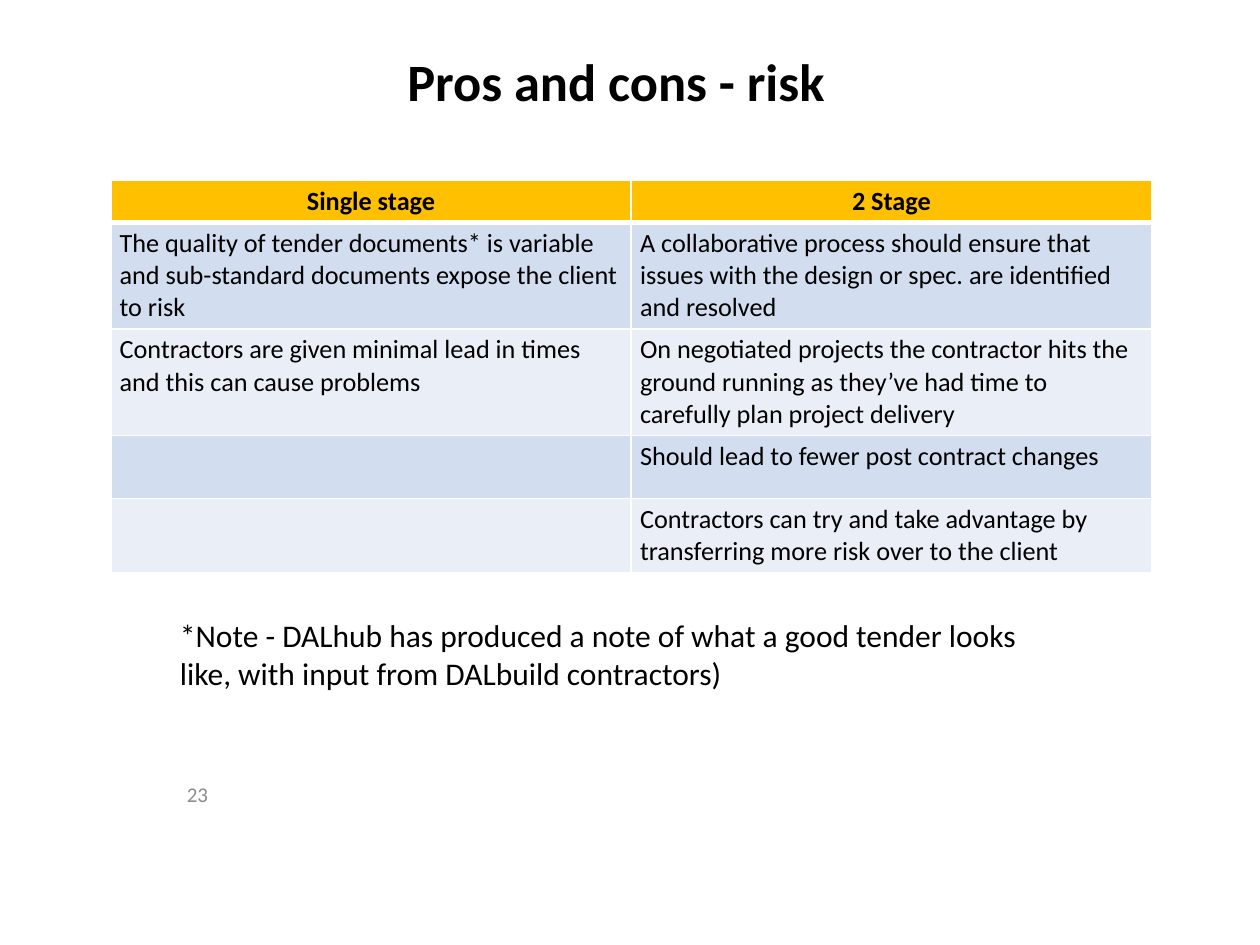
from lxml.etree import SubElement
from pptx import Presentation
from pptx.dml.color import RGBColor
from pptx.enum.text import MSO_ANCHOR as Anchor, MSO_AUTO_SIZE as AutoSize, PP_ALIGN as Align
from pptx.oxml.ns import qn
from pptx.util import Inches, Pt

HEADINGS = ["Single stage", "2 Stage"]
RISKS = [
    ("The quality of tender documents* is variable and sub-standard documents "
     "expose the client to risk",
     "A collaborative process should ensure that issues with the design or spec. "
     "are identified and resolved"),
    ("Contractors are given minimal lead in times and this can cause problems",
     "On negotiated projects the contractor hits the ground running as they’ve had "
     "time to carefully plan project delivery"),
    ("", "Should lead to fewer post contract changes"),
    ("", "Contractors can try and take advantage by transferring more risk over "
     "to the client"),
]
ROW_HEIGHTS = [4.4, 10.93, 10.93, 6.67, 7.6]


def colour(hex_text):
    return RGBColor.from_string(hex_text)


class RiskSlide:
    """Places elements on one slide; lengths are percentages of its size."""
    font = "Calibri"
    ink, grey, rule = "000000", "8C8C8C", "FFFFFF"
    header_fill, band_fills = "FFC000", ("D2DEEF", "EAEFF7")

    def __init__(self, deck):
        self.deck = deck
        self.page = deck.slides.add_slide(deck.slide_layouts[5])

    def across(self, share):
        return round(self.deck.slide_width * share / 100)

    def down(self, share):
        return round(self.deck.slide_height * share / 100)

    def area(self, left, top, width, height):
        return self.across(left), self.down(top), self.across(width), self.down(height)

    def add_words(self, frame, text, size, align=Align.LEFT, bold=False, ink=None):
        frame.word_wrap = True
        para = frame.paragraphs[0]
        para.alignment = align
        span = para.add_run()
        span.text = text
        span.font.name = self.font
        span.font.size = Pt(size)
        span.font.bold = bold
        span.font.color.rgb = colour(ink or self.ink)

    def title(self, text, area):
        box = self.page.shapes.title
        box.left, box.top, box.width, box.height = self.area(*area)
        box.text_frame.vertical_anchor = Anchor.MIDDLE
        self.add_words(box.text_frame, text, 30, Align.CENTER, bold=True)

    def text(self, text, area, size, anchor=Anchor.TOP, auto_size=AutoSize.NONE, **style):
        frame = self.page.shapes.add_textbox(*self.area(*area)).text_frame
        frame.vertical_anchor = anchor
        frame.auto_size = auto_size
        self.add_words(frame, text, size, **style)

    def border(self, cell, side, points):
        line = SubElement(cell._tc.get_or_add_tcPr(), qn(f"a:ln{side}"), w=str(Pt(points)))
        fill = SubElement(line, qn("a:solidFill"))
        SubElement(fill, qn("a:srgbClr"), val=self.rule)

    def cell(self, cell, text, row):
        header = row == 0
        cell.margin_left = cell.margin_right = Inches(0.07)
        cell.margin_top = cell.margin_bottom = Inches(0.04)
        for side in "LRTB":
            heavy = (header and side == "B") or (row == 1 and side == "T")
            self.border(cell, side, 3 if heavy else 1)
        cell.fill.solid()
        cell.fill.fore_color.rgb = colour(
            self.header_fill if header else self.band_fills[(row - 1) % 2])
        if text:
            self.add_words(cell.text_frame, text, 15,
                           Align.CENTER if header else Align.LEFT, bold=header)

    def table(self, rows, heights, left, top, width):
        area = self.area(left, top, width, sum(heights))
        table = self.page.shapes.add_table(len(rows), len(rows[0]), *area).table
        for column in table.columns:
            column.width = self.across(width / len(rows[0]))
        for index, (texts, height) in enumerate(zip(rows, heights)):
            table.rows[index].height = self.down(height)
            for column, text in enumerate(texts):
                self.cell(table.cell(index, column), text, index)


def main():
    deck = Presentation()
    deck.slide_width, deck.slide_height = Inches(10), Inches(7.5)
    slide = RiskSlide(deck)
    slide.text("23", (0, 82, 17.5, 4), 12, Anchor.MIDDLE, align=Align.RIGHT, ink=slide.grey)
    slide.title("Pros and cons - risk", (13.3, 2.67, 71.2, 11.73))
    slide.table([HEADINGS, *RISKS], ROW_HEIGHTS, 8.8, 19.07, 82.6)
    slide.text("*Note - DALhub has produced a note of what a good tender looks like, "
               "with input from DALbuild contractors)",
               (13.3, 64.53, 72.8, 9.47), 18, auto_size=AutoSize.SHAPE_TO_FIT_TEXT)
    deck.save("out.pptx")


if __name__ == "__main__":
    main()
